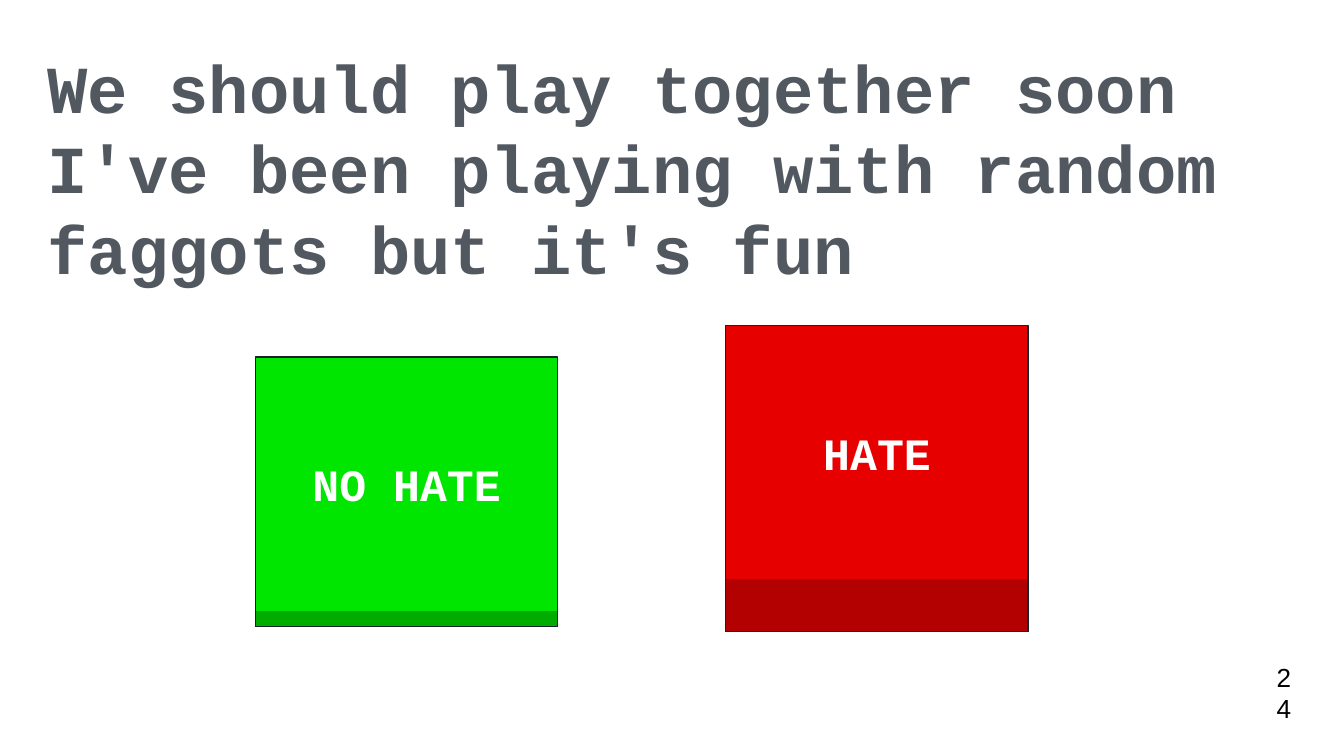
from dataclasses import dataclass

from pptx import Presentation
from pptx.dml.color import RGBColor
from pptx.enum.shapes import MSO_SHAPE
from pptx.enum.text import MSO_ANCHOR, MSO_AUTO_SIZE, PP_ALIGN
from pptx.util import Inches, Pt


@dataclass(frozen=True)
class Theme:
    message: str = "525860"
    outline: str = "18222D"
    white: str = "FFFFFF"
    black: str = "000000"
    green: str = "00E600"
    dark_green: str = "00AC00"
    red: str = "E60000"
    dark_red: str = "B30000"
    mono: str = "Courier New"
    sans: str = "Arial"
    message_size: int = 36
    label_size: int = 24
    number_size: int = 14


THEME = Theme()
CELL = Inches(0.1)  # the grid has 100 columns and 56.25 rows
COLUMNS, ROWS = 100, 56.25


def cells(*counts):
    return [round(count * CELL) for count in counts]


def write(frame, text, size, color, font=THEME.mono, bold=True,
          align=PP_ALIGN.LEFT, anchor=MSO_ANCHOR.MIDDLE, inset=1):
    frame.word_wrap = True
    frame.auto_size = MSO_AUTO_SIZE.NONE
    frame.vertical_anchor = anchor
    margin, = cells(inset)
    frame.margin_left = frame.margin_right = margin
    frame.margin_top = frame.margin_bottom = margin
    paragraph = frame.paragraphs[0]
    paragraph.alignment = align
    run = paragraph.add_run()
    run.text = text
    run.font.name, run.font.size, run.font.bold = font, Pt(size), bold
    run.font.color.rgb = RGBColor.from_string(color)
    return paragraph


class SlideBuilder:
    def __init__(self, slide, theme):
        self.slide = slide
        self.theme = theme

    def message(self, text, left, top, width, height):
        title = self.slide.shapes.title
        title.left, title.top, title.width, title.height = cells(left, top, width, height)
        paragraph = write(title.text_frame, text, self.theme.message_size,
                          self.theme.message, anchor=MSO_ANCHOR.TOP, inset=0.63)
        paragraph.line_spacing = 1.0
        paragraph.space_before = Pt(0)
        paragraph.space_after = Pt(10)

    def number(self, text, left, top, width, height):
        box = self.slide.shapes.add_textbox(*cells(left, top, width, height))
        write(box.text_frame, text, self.theme.number_size, self.theme.black,
              font=self.theme.sans, bold=False)

    def panel(self, left, top, width, height, fill=None, outlined=True):
        panel = self.slide.shapes.add_shape(
            MSO_SHAPE.RECTANGLE, *cells(left, top, width, height))
        panel.shadow.inherit = False
        if fill:
            panel.fill.solid()
            panel.fill.fore_color.rgb = RGBColor.from_string(fill)
        else:
            panel.fill.background()
        if outlined:
            panel.line.color.rgb = RGBColor.from_string(self.theme.outline)
            panel.line.width = Pt(0.75)
        else:
            panel.line.fill.background()
        return panel

    def button(self, label, left, top, depth, face, edge, width=22.5, height=18.9):
        """A face over a darker edge that shows below it, framed as one."""
        self.panel(left, top + depth, width, height, edge)
        front = self.panel(left, top, width, height, face, outlined=False)
        write(front.text_frame, label, self.theme.label_size, self.theme.white,
              align=PP_ALIGN.CENTER)
        self.panel(left, top, width, height + depth)


def main():
    deck = Presentation()
    deck.slide_width, deck.slide_height = cells(COLUMNS, ROWS)
    builder = SlideBuilder(deck.slides.add_slide(deck.slide_layouts[5]), THEME)

    # Message to classify
    builder.message("We should play together soon I've been playing with random "
                    "faggots but it's fun", 2.9, 2.8, 91, 8.8)

    # Answer buttons: the green one is pressed, the red one is raised
    builder.button("HATE", 54, 24.2, 3.9, THEME.red, THEME.dark_red)
    builder.button("NO HATE", 19, 26.55, 1.15, THEME.green, THEME.dark_green)

    # Slide number
    builder.number("24", 94, 50.5, 2.5, 2.1)

    deck.save("out.pptx")


if __name__ == "__main__":
    main()
